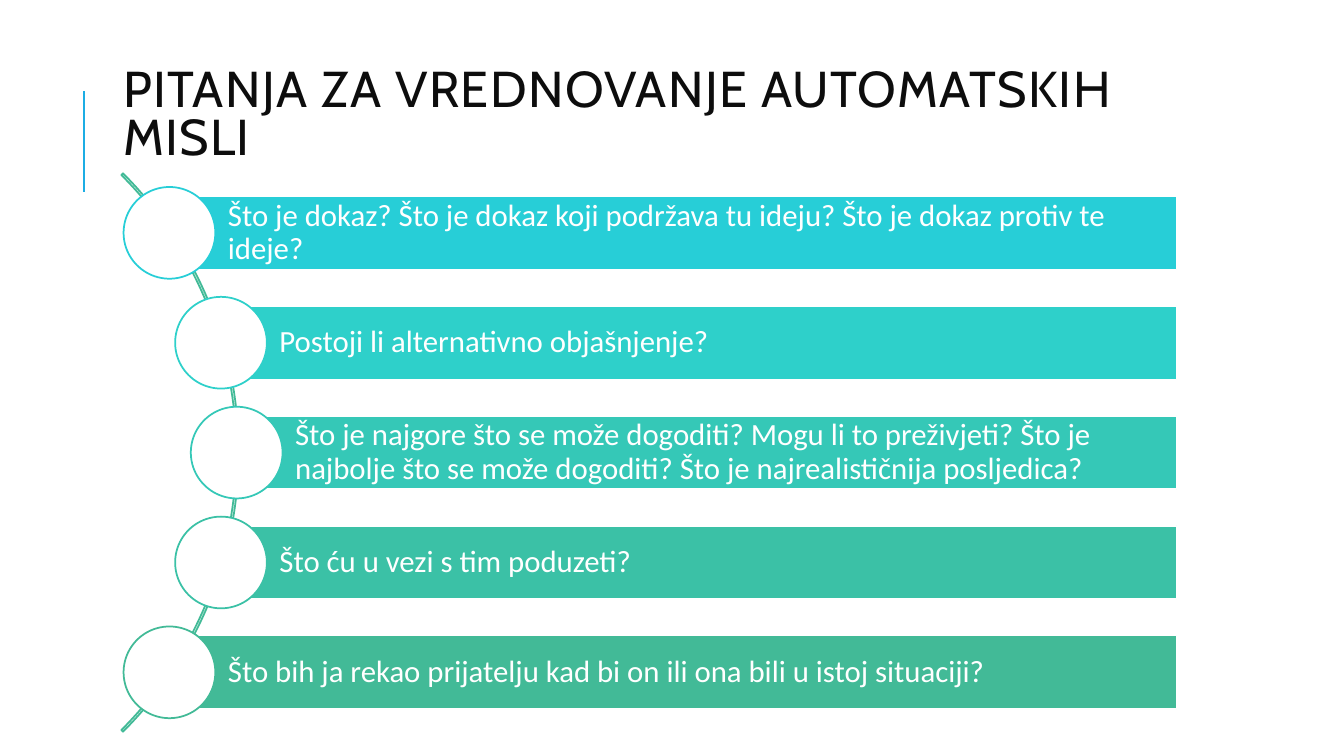
from collections import namedtuple
from math import sqrt

from pptx import Presentation
from pptx.dml.color import RGBColor
from pptx.enum.shapes import MSO_CONNECTOR, MSO_SHAPE
from pptx.enum.text import MSO_ANCHOR, MSO_AUTO_SIZE, PP_ALIGN
from pptx.util import Inches, Pt
from lxml.etree import SubElement
from pptx.oxml.ns import qn

Box = namedtuple("Box", "left top width height")

COLORS = {"paper": "FFFFFF", "title": "0D0D0D", "rule": "1CADE4", "arc": "42BA97"}
TITLE = "PITANJA ZA VREDNOVANJE AUTOMATSKIH MISLI"
QUESTIONS = [
    ("27CED7", "Što je dokaz? Što je dokaz koji podržava tu ideju? Što je dokaz protiv te ideje?"),
    ("2ED0CA", "Postoji li alternativno objašnjenje?"),
    ("35C8B7", "Što je najgore što se može dogoditi? Mogu li to preživjeti? "
               "Što je najbolje što se može dogoditi? Što je najrealističnija posljedica?"),
    ("3BC1A6", "Što ću u vezi s tim poduzeti?"),
    ("42BA97", "Što bih ja rekao prijatelju kad bi on ili ona bili u istoj situaciji?"),
]


def color(code):
    """Turn a hex string into a colour."""
    return RGBColor.from_string(code)


def inches(box):
    """Convert the four lengths of a box to slide units."""
    return [Inches(length) for length in box]


def add_outlined(page, kind, box, line, fill=None):
    """Add a flat shape with a thin outline and an optional fill."""
    shape = page.shapes.add_shape(kind, *inches(box))
    shape.shadow.inherit = False
    if fill:
        shape.fill.solid()
        shape.fill.fore_color.rgb = color(fill)
    else:
        shape.fill.background()
    shape.line.color.rgb = color(line)
    shape.line.width = Pt(1.25)
    return shape


def style_text(frame, font, size, code, spacing):
    """Format the single left-aligned, vertically centred paragraph of a frame."""
    frame.word_wrap = True
    frame.auto_size = MSO_AUTO_SIZE.NONE
    frame.vertical_anchor = MSO_ANCHOR.MIDDLE
    para = frame.paragraphs[0]
    para.alignment = PP_ALIGN.LEFT
    para.line_spacing = spacing
    span = para.runs[0]
    span.font.name = font
    span.font.size = Pt(size)
    span.font.color.rgb = color(code)
    return span


def add_heading(page, box):
    """Place the title with the vertical rule to its left."""
    rule_x, rule_top = box.left - 0.29, box.top + 0.27
    rule = page.shapes.add_connector(
        MSO_CONNECTOR.STRAIGHT, *inches((rule_x, rule_top + 1, rule_x, rule_top)))
    rule.line.color.rgb = color(COLORS["rule"])
    rule.line.width = Pt(1.5)
    SubElement(rule.element.spPr, qn("a:effectLst"))

    title = page.shapes.title
    title.left, title.top, title.width, title.height = inches(box)
    title.text_frame.text = TITLE
    span = style_text(title.text_frame, "Cabin", 36, COLORS["title"], 0.8)
    span.font._element.set("spc", "100")


def add_question(page, box, code, question, circle_size):
    """Draw one question bar with a circle centred on its left edge."""
    bar = add_outlined(page, MSO_SHAPE.RECTANGLE, box, COLORS["paper"], code)
    frame = bar.text_frame
    frame.text = question
    frame.margin_left = Inches(0.58)
    frame.margin_top = frame.margin_right = frame.margin_bottom = Inches(0.06)
    style_text(frame, "Calibri", 22, COLORS["paper"], 0.9)
    circle = Box(box.left - circle_size / 2, box.top + (box.height - circle_size) / 2,
                 circle_size, circle_size)
    add_outlined(page, MSO_SHAPE.OVAL, circle, code, COLORS["paper"])


def add_question_curve(page, box):
    """Arrange the questions in even rows whose circles follow an arc."""
    radius = box.height / sqrt(2)
    center_x = box.left - radius / sqrt(2)
    center_y = box.top + box.height / 2
    arc = add_outlined(page, MSO_SHAPE.BLOCK_ARC,
                       Box(center_x - radius, center_y - radius, 2 * radius, 2 * radius),
                       COLORS["arc"])
    for index, value in enumerate((189, 27, 0.003)):
        arc.adjustments[index] = value

    pitch, bar_height, circle_size = 1.09, 0.73, 0.91
    for row, (code, question) in enumerate(QUESTIONS):
        offset = (row - (len(QUESTIONS) - 1) / 2) * pitch
        left = center_x + sqrt((radius - 0.02) ** 2 - offset ** 2)
        bar = Box(left, center_y + offset - bar_height / 2,
                  box.left + box.width - left, bar_height)
        add_question(page, bar, code, question, circle_size)


def main():
    """Build the slide and save the deck."""
    deck = Presentation()
    deck.slide_width, deck.slide_height = Inches(13.33), Inches(7.5)
    page = deck.slides.add_slide(deck.slide_layouts[5])
    add_heading(page, Box(1.12, 0.63, 10.63, 1.06))
    add_question_curve(page, Box(1.22, 1.72, 10.45, 5.54))
    deck.save("out.pptx")


if __name__ == "__main__":
    main()
